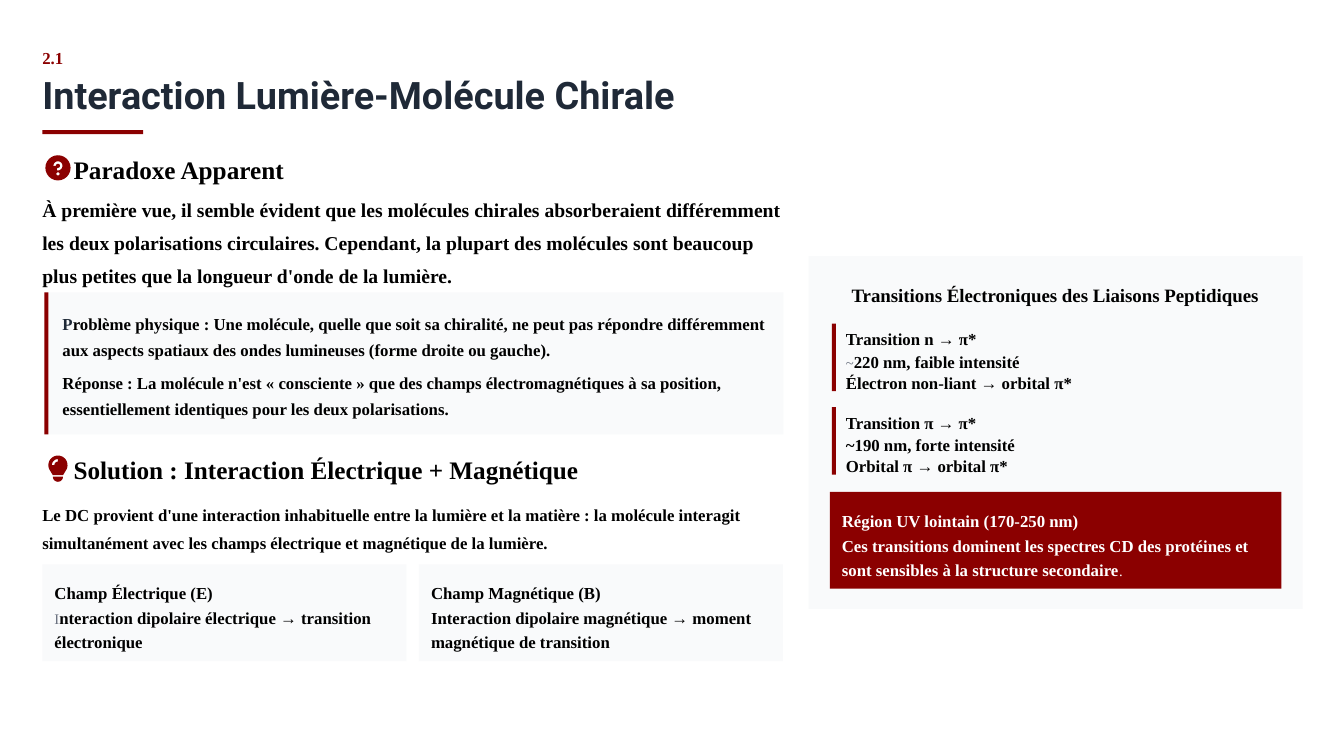
"""Builds the slide on the interaction between light and chiral molecules."""
from math import cos, radians, sin
from pptx import Presentation, util as u
from pptx.dml.color import RGBColor
from pptx.enum import shapes, text

THEME = {
    "serif": "Times New Roman", "sans": "Roboto",
    "red": "8B0000", "panel": "F9FAFB", "ink": "000000", "navy": "1F2937", "grey": "6B7280", "white": "FFFFFF",
    "title": 27, "heading": 18, "lead": 14, "panel_title": 13.5, "body": 12, "small": 10.5,
}

NUMBER = "2.1"
TITLE = "Interaction Lumière-Molécule Chirale"
PARADOX = "Paradoxe Apparent"
PARADOX_LEAD = ("À première vue, il semble évident que les molécules chirales absorberaient différemment "
                "les deux polarisations circulaires. Cependant, la plupart des molécules sont beaucoup "
                "plus petites que la longueur d'onde de la lumière.")
ARGUMENTS = [
    [("P", {"color": "navy"}),
     "roblème physique : Une molécule, quelle que soit sa chiralité, ne peut pas répondre différemment "
     "aux aspects spatiaux des ondes lumineuses (forme droite ou gauche)."],
    ["Réponse : La molécule n'est « consciente » que des champs électromagnétiques à sa position, "
     "essentiellement identiques pour les deux polarisations."],
]
SOLUTION = "Solution : Interaction Électrique + Magnétique"
SOLUTION_LEAD = ("Le DC provient d'une interaction inhabituelle entre la lumière et la matière : la molécule "
                 "interagit simultanément avec les champs électrique et magnétique de la lumière.")
FAINT = {"color": "grey", "size": "small", "bold": False}
FIELDS = [
    ("Champ Électrique (E)", [("I", FAINT), "nteraction dipolaire électrique → transition électronique"]),
    ("Champ Magnétique (B)", ["Interaction dipolaire magnétique → moment magnétique de transition"]),
]
PANEL_TITLE = "Transitions Électroniques des Liaisons Peptidiques"
TRANSITIONS = [
    ("Transition n → π*", [("~", FAINT), "220 nm, faible intensité"], "Électron non-liant → orbital π*"),
    ("Transition π → π*", ["~190 nm, forte intensité"], "Orbital π → orbital π*"),
]
REGION = ("Région UV lointain (170-250 nm)",
          ["Ces transitions dominent les spectres CD des protéines et sont sensibles à la structure secondaire",
           (".", {"size": "small", "bold": False})])

deck = Presentation()
deck.slide_width, deck.slide_height = u.Inches(13.33), u.Inches(7.5)
slide = deck.slides.add_slide(deck.slide_layouts[6])


def paint(shape, color):
    shape.shadow.inherit = False
    shape.fill.solid()
    shape.fill.fore_color.rgb = RGBColor.from_string(THEME[color])
    shape.line.fill.background()


def block(left, top, width, height, color):
    paint(slide.shapes.add_shape(shapes.MSO_SHAPE.RECTANGLE, *map(u.Inches, (left, top, width, height))), color)


def write(left, top, width, height, runs, size="body", spacing=1.3, color="ink", font="serif", align="LEFT"):
    frame = slide.shapes.add_textbox(*map(u.Inches, (left, top, width, height))).text_frame
    frame.word_wrap = True
    frame.margin_left = frame.margin_right = frame.margin_top = frame.margin_bottom = 0
    frame.vertical_anchor = text.MSO_ANCHOR.MIDDLE
    line = frame.paragraphs[0]
    line.alignment = text.PP_ALIGN[align]
    line.line_spacing = spacing
    for part in [runs] if isinstance(runs, str) else runs:
        words, change = (part, {}) if isinstance(part, str) else part
        look = {"size": size, "color": color, "bold": True, **change}
        run = line.add_run()
        run.text = words
        run.font.name = THEME[font]
        run.font.size = u.Pt(THEME[look["size"]])
        run.font.bold = look["bold"]
        run.font.color.rgb = RGBColor.from_string(THEME[look["color"]])


def arc(x, y, radius, start, end, steps=24):
    angles = [radians(start + (end - start) * i / steps) for i in range(steps + 1)]
    return [(x + radius * cos(a), y + radius * sin(a)) for a in angles]


def icon(contours):
    outlines = [[(u.Inches(x), u.Inches(y)) for x, y in contour] for contour in contours]
    builder = slide.shapes.build_freeform(*outlines[0][0], scale=1.0)
    for index, outline in enumerate(outlines):
        if index:
            builder.move_to(*outline[0])
        builder.add_line_segments(outline[1:], close=True)
    paint(builder.convert_to_shape(), "red")


def question_icon(x, y):
    hook = (arc(x, y - 0.02, 0.045, 180, 420)
            + [(x + 0.012, y + 0.025), (x - 0.012, y + 0.025), (x - 0.012, y + 0.006)]
            + arc(x, y - 0.02, 0.02, 420, 180))
    icon([arc(x, y, 0.125, 0, 360), hook, arc(x, y + 0.06, 0.016, 0, 360)])


def bulb_icon(x, y):
    icon([arc(x, y, 0.095, 145, 395) + [(x + 0.05, y + 0.1), (x - 0.05, y + 0.1)],
          arc(x, y + 0.115, 0.05, 0, 180),
          arc(x, y, 0.06, 180, 270) + arc(x, y, 0.035, 270, 180)])


LEFT = 0.42
write(LEFT, 0.42, 12.58, 0.25, NUMBER, color="red")
write(LEFT, 0.75, 12.69, 0.42, TITLE, "title", 0.9, "navy", "sans")
block(LEFT, 1.29, 1, 0.04, "red")

question_icon(0.575, 1.665)
write(0.73, 1.5, 7.17, 0.33, PARADOX, "heading", 1.1)
write(LEFT, 1.96, 7.44, 0.81, PARADOX_LEAD, "lead", 1.4)
block(0.44, 2.9, 7.33, 1.41, "panel")
block(0.44, 2.9, 0.04, 1.41, "red")
for row, argument in enumerate(ARGUMENTS):
    write(0.62, 3.06 + 0.59 * row, 7.06, 0.5, argument)

bulb_icon(0.575, 4.615)
write(0.73, 4.48, 7.17, 0.33, SOLUTION, "heading", 1.1)
write(LEFT, 4.94, 7.44, 0.54, SOLUTION_LEAD, spacing=1.4)


def card(left, top, width, color, heading, detail, ink="ink"):
    block(left, top, width, 0.96, color)
    write(left + 0.12, top + 0.13, width - 0.16, 0.25, heading, color=ink)
    write(left + 0.12, top + 0.42, width - 0.17, 0.42, detail, spacing=1.2, color=ink)


for column, (field, effect) in enumerate(FIELDS):
    card(LEFT + 3.735 * column, 5.6, 3.61, "panel", field, effect)

block(8.02, 2.54, 4.9, 3.5, "panel")
write(8.18, 2.75, 4.57, 0.29, PANEL_TITLE, "panel_title", align="CENTER")
for row, (name, band, orbitals) in enumerate(TRANSITIONS):
    top = 3.21 + 0.83 * row
    block(8.25, top, 0.04, 0.67, "red")
    write(8.39, top, 4.4, 0.25, name)
    write(8.39, top + 0.25, 4.39, 0.21, band, spacing=1.2)
    write(8.39, top + 0.46, 4.39, 0.21, orbitals, spacing=1.2)
card(8.23, 4.88, 4.48, "red", *REGION, ink="white")

deck.save("out.pptx")
